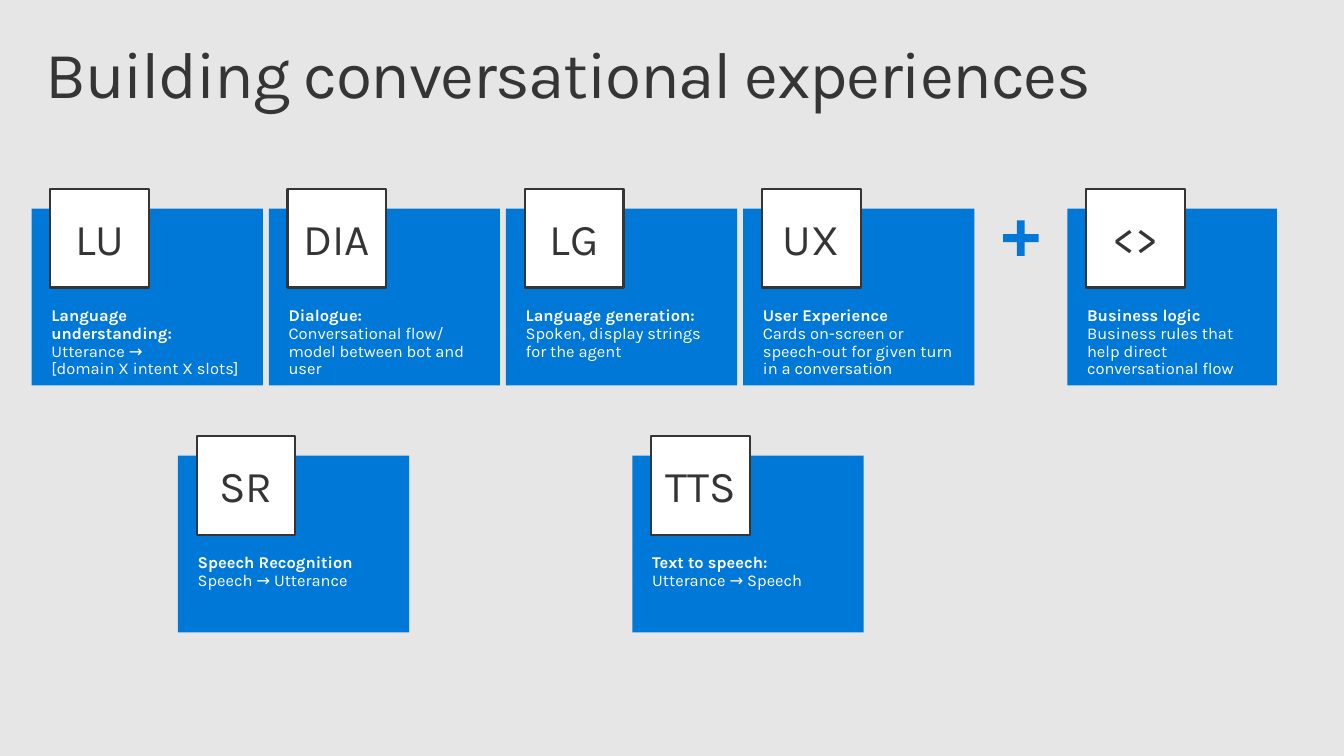
import pptx
import pptx.util
import pptx.dml.color
import pptx.enum.shapes
import pptx.enum.text

Inches, Pt = pptx.util.Inches, pptx.util.Pt
SHAPE = pptx.enum.shapes.MSO_SHAPE
ANCHOR = pptx.enum.text.MSO_ANCHOR
ALIGN = pptx.enum.text.PP_ALIGN
COLORS = {"back": "E6E6E6", "ink": "353535", "blue": "0078D7", "white": "FFFFFF"}
FONT = "Karla"

# Grid in inches: a row of four cards, each next one a pitch further right
LEFT, PITCH = 0.32, 2.4
CARD_WIDTH, CARD_HEIGHT = 2.34, 1.79
TOP_ROW, SPEECH_ROW = 2.11, 4.61
BADGE, BADGE_INDENT, BADGE_RISE = 1, 0.19, 0.2


def color(name):
    return pptx.dml.color.RGBColor.from_string(COLORS[name])


def add_block(shapes, kind, place, fill, margins=(0, 0, 0, 0)):
    block = shapes.add_shape(kind, *map(Inches, place))
    block.shadow.inherit = False
    block.fill.solid()
    block.fill.fore_color.rgb = color(fill)
    block.line.fill.background()
    frame = block.text_frame
    frame.word_wrap = True
    (frame.margin_left, frame.margin_top,
     frame.margin_right, frame.margin_bottom) = map(Inches, margins)
    return block


deck = pptx.Presentation()
deck.slide_width, deck.slide_height = Inches(13.6), Inches(7.65)
page = deck.slides.add_slide(deck.slide_layouts[5])
page.background.fill.solid()
page.background.fill.fore_color.rgb = color("back")

# Title
title = page.shapes.title
title.left, title.top, title.width, title.height = map(Inches, (0.3, 0.32, 13, 1))
frame = title.text_frame
frame.auto_size = pptx.enum.text.MSO_AUTO_SIZE.NONE
frame.word_wrap = True
frame.vertical_anchor = ANCHOR.TOP
frame.margin_left = frame.margin_right = Inches(0.16)
frame.margin_top = frame.margin_bottom = Inches(0.1)
para = frame.paragraphs[0]
para.alignment = ALIGN.LEFT
para.line_spacing = 0.9
span = para.add_run()
span.text = "Building conversational experiences"
span.font.name, span.font.size = FONT, Pt(48)
span.font.color.rgb = color("ink")
span.font._element.set("spc", "-100")

# Cards: left, top, width, badge, heading, description
cards = [
    (LEFT, TOP_ROW, CARD_WIDTH, "LU", "Language understanding:",
     "Utterance →\n[domain X intent X slots]"),
    (LEFT + PITCH, TOP_ROW, CARD_WIDTH, "DIA", "Dialogue:",
     "Conversational flow/ model between bot and user"),
    (LEFT + 2 * PITCH, TOP_ROW, CARD_WIDTH, "LG", "Language generation:",
     "Spoken, display strings\nfor the agent"),
    (LEFT + 3 * PITCH, TOP_ROW, CARD_WIDTH, "UX", "User Experience",
     "Cards on-screen or speech-out for given turn in a conversation"),
    (10.8, TOP_ROW, 2.12, "<>", "Business logic",
     "Business rules that help direct conversational flow"),
    (1.8, SPEECH_ROW, CARD_WIDTH, "SR", "Speech Recognition", "Speech → Utterance"),
    (6.4, SPEECH_ROW, CARD_WIDTH, "TTS", "Text to speech:", "Utterance → Speech"),
]
for left, top, width, label, heading, description in cards:
    group = page.shapes.add_group_shape()
    card = add_block(group.shapes, SHAPE.RECTANGLE, (left, top, width, CARD_HEIGHT),
                     "blue", (0.2, 1, 0.2, 0.16))
    frame = card.text_frame
    frame.vertical_anchor = ANCHOR.TOP
    for para, text, bold in ((frame.paragraphs[0], heading, True),
                             (frame.add_paragraph(), description, False)):
        para.text = text
        para.alignment = ALIGN.LEFT
        para.line_spacing = 0.9
        para.font.name, para.font.size, para.font.bold = FONT, Pt(12), bold
        para.font.color.rgb = color("white")

    badge = add_block(group.shapes, SHAPE.RECTANGLE,
                      (left + BADGE_INDENT, top - BADGE_RISE, BADGE, BADGE), "white")
    badge.line.color.rgb = color("ink")
    badge.line.width = Pt(1.5)
    badge.text_frame.vertical_anchor = ANCHOR.MIDDLE
    para = badge.text_frame.paragraphs[0]
    para.text = label
    para.alignment = ALIGN.CENTER
    para.font.name, para.font.size = FONT, Pt(32)
    para.font.color.rgb = color("ink")

# Plus sign before the business logic
plus = add_block(page.shapes, SHAPE.CROSS, (10.15, 2.23, 0.36, 0.36), "blue")
plus.adjustments[0] = 0.39

deck.save("out.pptx")
